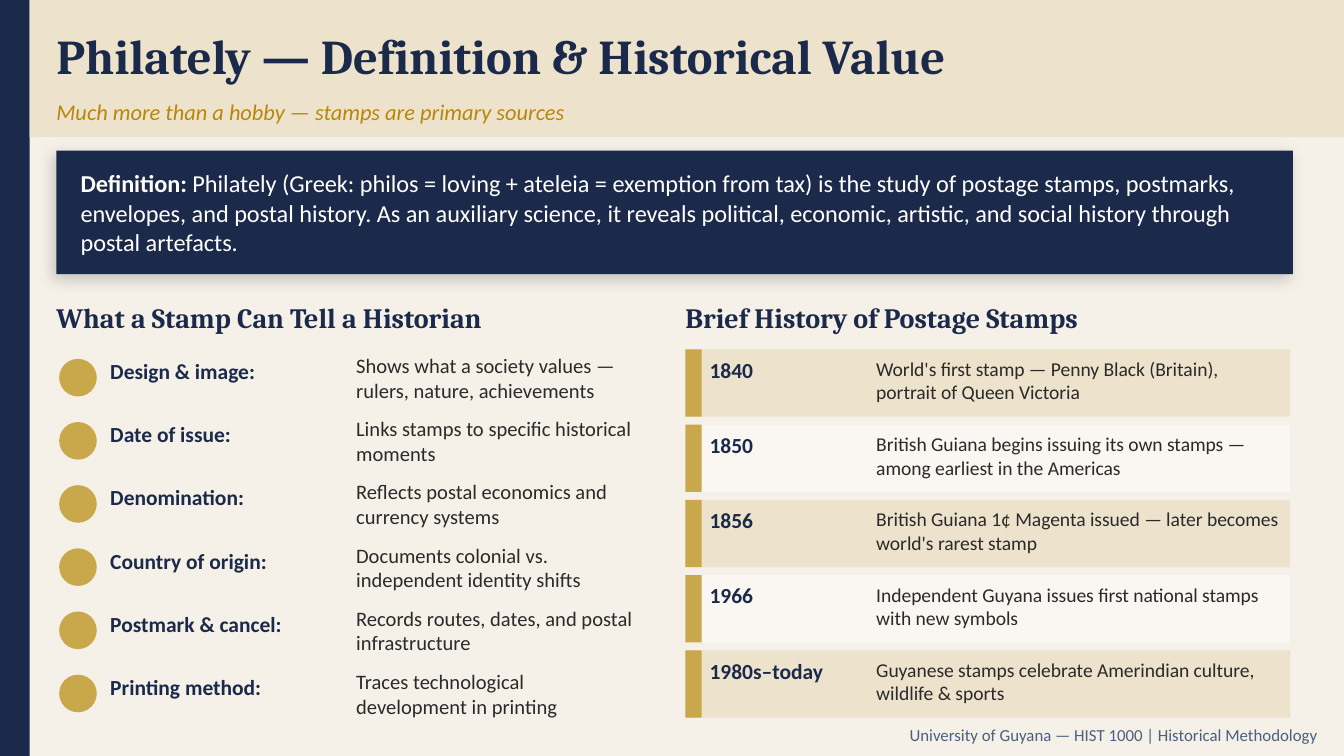
"""Build a slide on philately, its definition and its historical value."""
from dataclasses import dataclass

from lxml.etree import SubElement
from pptx import Presentation
from pptx.dml.color import RGBColor
from pptx.enum.shapes import MSO_SHAPE
from pptx.enum.text import MSO_ANCHOR, MSO_AUTO_SIZE, PP_ALIGN
from pptx.oxml.ns import qn
from pptx.util import Inches, Pt

SLIDE_WIDTH = 10
SLIDE_HEIGHT = SLIDE_WIDTH * 9 / 16

TITLE = "Philately — Definition & Historical Value"
SUBTITLE = "Much more than a hobby — stamps are primary sources"
FOOTER = "University of Guyana — HIST 1000 | Historical Methodology"
DEFINITION = [
    ("Definition: ", True),
    ("Philately (Greek: philos = loving + ateleia = exemption from tax) is the study of "
     "postage stamps, postmarks, envelopes, and postal history. As an auxiliary science, "
     "it reveals political, economic, artistic, and social history through postal artefacts.",
     False),
]
CLUES_HEADING = "What a Stamp Can Tell a Historian"
CLUES = [
    ("Design & image:", "Shows what a society values — rulers, nature, achievements"),
    ("Date of issue:", "Links stamps to specific historical moments"),
    ("Denomination:", "Reflects postal economics and currency systems"),
    ("Country of origin:", "Documents colonial vs. independent identity shifts"),
    ("Postmark & cancel:", "Records routes, dates, and postal infrastructure"),
    ("Printing method:", "Traces technological development in printing"),
]
HISTORY_HEADING = "Brief History of Postage Stamps"
HISTORY = [
    ("1840", "World's first stamp — Penny Black (Britain), portrait of Queen Victoria"),
    ("1850", "British Guiana begins issuing its own stamps — among earliest in the Americas"),
    ("1856", "British Guiana 1¢ Magenta issued — later becomes world's rarest stamp"),
    ("1966", "Independent Guyana issues first national stamps with new symbols"),
    ("1980s–today", "Guyanese stamps celebrate Amerindian culture, wildlife & sports"),
]


@dataclass(frozen=True)
class Theme:
    """Colours, fonts and type sizes."""
    navy: str = "1B2A4A"
    sand: str = "EDE3CC"
    paper: str = "F5F0E8"
    ivory: str = "FAF7F2"
    gold: str = "C9A84C"
    dark_gold: str = "B8860B"
    slate: str = "4A6080"
    ink: str = "2A2A2A"
    white: str = "FFFFFF"
    heading_font: str = "Cambria"
    body_font: str = "Calibri"
    title_size: float = 26
    heading_size: float = 15
    definition_size: float = 13
    subtitle_size: float = 12
    label_size: float = 11.5
    clue_size: float = 11
    event_size: float = 10.5
    footer_size: float = 9


THEME = Theme()


def place(shape, left, top, width, height):
    shape.left, shape.top = Inches(left), Inches(top)
    shape.width, shape.height = Inches(width), Inches(height)


def add_block(slide, box, color, kind=MSO_SHAPE.RECTANGLE):
    shape = slide.shapes.add_shape(kind, *map(Inches, box))
    shape.shadow.inherit = False
    shape.fill.solid()
    shape.fill.fore_color.rgb = RGBColor.from_string(color)
    shape.line.fill.background()
    return shape


def add_soft_shadow(shape):
    effects = shape._element.spPr.find(qn("a:effectLst"))
    shadow = SubElement(effects, qn("a:outerShdw"), blurRad=str(Pt(8)), dist=str(Pt(3)),
                        dir=str(135 * 60000), algn="bl", rotWithShape="0")
    color = SubElement(shadow, qn("a:srgbClr"), val="000000")
    SubElement(color, qn("a:alpha"), val="18000")


def write(shape, content, size, color, font=THEME.body_font, bold=None, italic=None,
          align=PP_ALIGN.LEFT):
    frame = shape.text_frame
    frame.word_wrap = True
    frame.auto_size = MSO_AUTO_SIZE.NONE
    frame.vertical_anchor = MSO_ANCHOR.MIDDLE
    frame.margin_left = frame.margin_right = frame.margin_top = frame.margin_bottom = 0
    paragraph = frame.paragraphs[0]
    paragraph.alignment = align
    for text, run_bold in [(content, bold)] if isinstance(content, str) else content:
        run = paragraph.add_run()
        run.text = text
        if run_bold != bold:
            run.font.bold = run_bold
    paragraph.font.name = font
    paragraph.font.size = Pt(size)
    paragraph.font.bold = bold
    paragraph.font.italic = italic
    paragraph.font.color.rgb = RGBColor.from_string(color)


def add_text(slide, box, content, size, color, **style):
    write(slide.shapes.add_textbox(*map(Inches, box)), content, size, color, **style)


def add_heading(slide, box, text):
    add_text(slide, box, text, THEME.heading_size, THEME.navy,
             font=THEME.heading_font, bold=True)


def add_header(slide):
    add_block(slide, (0, 0, 0.22, SLIDE_HEIGHT), THEME.navy)
    add_block(slide, (0.22, 0, SLIDE_WIDTH - 0.22, 1.02), THEME.sand)
    title = slide.shapes.title
    slide.shapes._spTree.append(title._element)
    place(title, 0.42, 0.1, 9, 0.62)
    write(title, TITLE, THEME.title_size, THEME.navy, font=THEME.heading_font, bold=True)
    add_text(slide, (0.42, 0.7, 9, 0.26), SUBTITLE, THEME.subtitle_size,
             THEME.dark_gold, italic=True)


def add_definition(slide):
    add_soft_shadow(add_block(slide, (0.42, 1.12, 9.2, 0.92), THEME.navy))
    add_text(slide, (0.6, 1.17, 8.9, 0.82), DEFINITION, THEME.definition_size, THEME.white)


def add_clues(slide, first_top=2.62, pitch=0.47):
    add_heading(slide, (0.42, 2.18, 4.4, 0.36), CLUES_HEADING)
    for index, (label, detail) in enumerate(CLUES):
        top = first_top + index * pitch
        add_block(slide, (0.44, top + 0.05, 0.28, 0.28), THEME.gold, MSO_SHAPE.OVAL)
        add_text(slide, (0.82, top, 1.78, 0.28), label, THEME.label_size, THEME.navy, bold=True)
        add_text(slide, (2.65, top, 2.1, 0.38), detail, THEME.clue_size, THEME.ink)


def add_history(slide, first_top=2.6, height=0.5, gap=0.06):
    add_heading(slide, (5.1, 2.18, 4.5, 0.36), HISTORY_HEADING)
    for index, (year, event) in enumerate(HISTORY):
        top = first_top + index * (height + gap)
        add_block(slide, (5.1, top, 4.5, height), (THEME.sand, THEME.ivory)[index % 2])
        add_block(slide, (5.1, top, 0.12, height), THEME.gold)
        add_text(slide, (5.28, top + 0.03, 1.2, 0.24), year, THEME.label_size,
                 THEME.navy, bold=True)
        add_text(slide, (6.52, top + 0.03, 3, 0.4), event, THEME.event_size, THEME.ink)


def main():
    presentation = Presentation()
    presentation.slide_width = Inches(SLIDE_WIDTH)
    presentation.slide_height = Inches(SLIDE_HEIGHT)
    slide = presentation.slides.add_slide(presentation.slide_layouts.get_by_name("Title Only"))
    slide.background.fill.solid()
    slide.background.fill.fore_color.rgb = RGBColor.from_string(THEME.paper)
    add_header(slide)
    add_text(slide, (0.3, 5.37, 9.5, 0.2), FOOTER, THEME.footer_size, THEME.slate,
             align=PP_ALIGN.RIGHT)
    add_definition(slide)
    add_clues(slide)
    add_history(slide)
    presentation.save("out.pptx")


if __name__ == "__main__":
    main()
